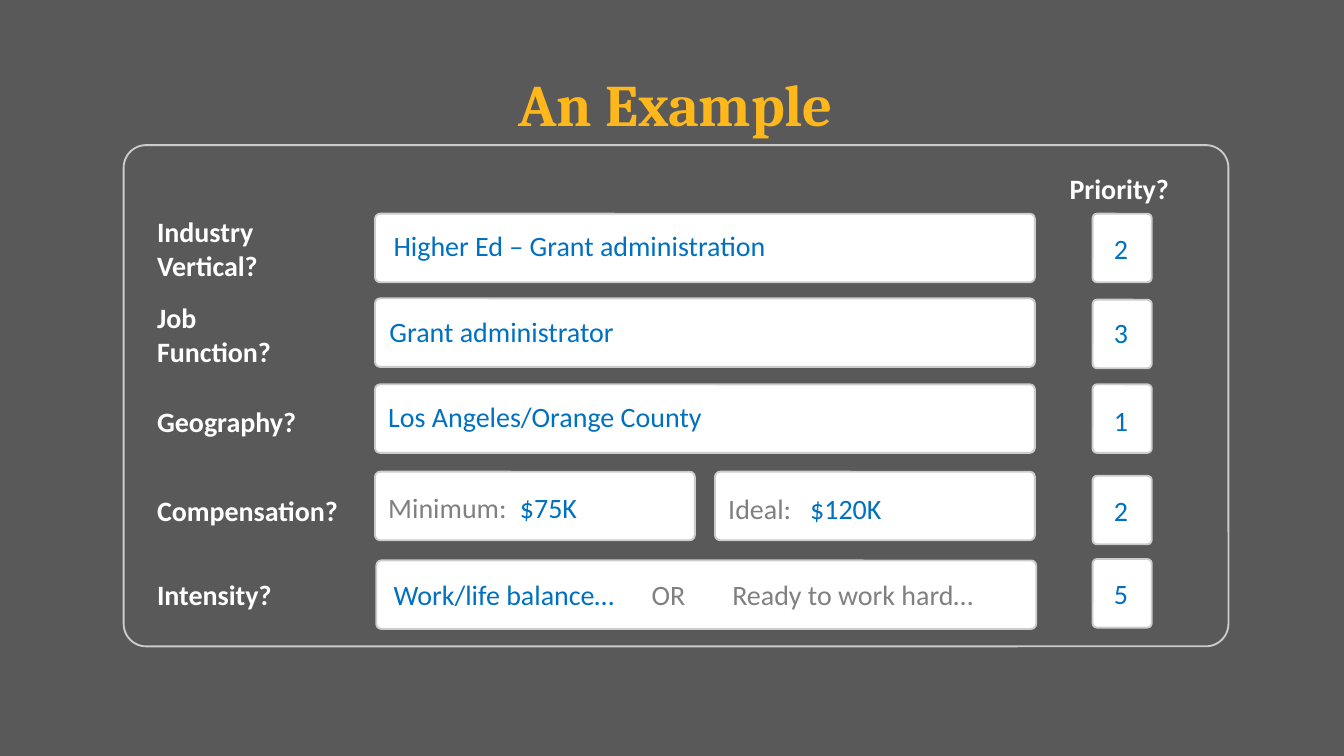
from lxml.etree import SubElement
from pptx import Presentation
from pptx.dml.color import RGBColor
from pptx.enum.shapes import MSO_SHAPE
from pptx.enum.text import MSO_ANCHOR, PP_ALIGN
from pptx.oxml.ns import qn
from pptx.util import Inches, Pt

COLORS = {
    "background": "595959",
    "title": "FFB81C",
    "border": "CCCCCC",
    "white": "FFFFFF",
    "answer": "0070C0",
    "prompt": "808080",
}

FIELD_LEFT, FIELD_WIDTH, HALF_WIDTH = 2.79, 4.91, 2.38
IDEAL_LEFT = 5.32
BOX_HEIGHT = 0.51
LABEL_LEFT, LABEL_WIDTH = 1.07, 2.38
PRIORITY_LEFT, PRIORITY_WIDTH = 8.13, 0.44
LINE_HEIGHT = 0.35

# label, label top, priority, priority box top, priority text top
ROWS = [
    ("Industry\nVertical?", 1.55, "2", 1.59, 1.67),
    ("Job\nFunction?", 2.19, "3", 2.23, 2.30),
    ("Geography?", 2.96, "1", 2.86, 2.95),
    ("Compensation?", 3.62, "2", 3.54, 3.62),
    ("Intensity?", 4.25, "5", 4.16, 4.24),
]

# left, top, width
FIELDS = [
    (FIELD_LEFT, 1.59, FIELD_WIDTH),
    (FIELD_LEFT, 2.22, FIELD_WIDTH),
    (FIELD_LEFT, 2.86, FIELD_WIDTH),
    (FIELD_LEFT, 3.51, HALF_WIDTH),
    (IDEAL_LEFT, 3.51, HALF_WIDTH),
    (2.80, 4.17, FIELD_WIDTH),
]

# left, top, width, runs of (text, color), tab position
ANSWERS = [
    (2.83, 1.65, 4.44, [("Higher Ed – Grant administration", "answer")], None),
    (2.80, 2.29, 4.44, [("Grant administrator", "answer")], None),
    (2.79, 2.92, 4.44, [("Los Angeles/Orange County", "answer")], None),
    (FIELD_LEFT, 3.60, HALF_WIDTH,
     [("Minimum:\t", "prompt"), ("$75K", "answer")], 0.98),
    (IDEAL_LEFT, 3.61, HALF_WIDTH,
     [("Ideal:\t", "prompt"), ("$120K", "answer")], 0.61),
    (2.83, 4.25, 2.92,
     [("Work/life balance…\t", "answer"), ("OR", "prompt")], 1.92),
    (5.35, 4.25, HALF_WIDTH, [("Ready to work hard…", "prompt")], None),
]


def rgb(name):
    return RGBColor.from_string(COLORS[name])


def add_box(slide, left, top, width, height, fill="white", corner=0.074):
    sp = slide.shapes.add_shape(MSO_SHAPE.ROUNDED_RECTANGLE, Inches(left),
                                Inches(top), Inches(width), Inches(height))
    sp.adjustments[0] = corner
    sp.shadow.inherit = False
    sp.fill.solid()
    sp.fill.fore_color.rgb = rgb(fill)
    sp.line.color.rgb = rgb("border")
    sp.line.width = Pt(1)


def set_tab(p, position):
    tabs = SubElement(p._p.get_or_add_pPr(), qn("a:tabLst"))
    SubElement(tabs, qn("a:tab"), pos=str(Inches(position)), algn="l")


def add_text(slide, left, top, width, lines, height=LINE_HEIGHT, size=15,
             font="Calibri", bold=False, align=PP_ALIGN.LEFT, tab=None):
    """Add a text box; each line is a list of (text, color) runs."""
    box = slide.shapes.add_textbox(Inches(left), Inches(top),
                                   Inches(width), Inches(height))
    tf = box.text_frame
    tf.word_wrap = True
    for i, runs in enumerate(lines):
        p = tf.add_paragraph() if i else tf.paragraphs[0]
        p.alignment = align
        if tab:
            set_tab(p, tab)
        for text, color in runs:
            r = p.add_run()
            r.text = text
            r.font.size = Pt(size)
            r.font.name = font
            r.font.bold = bold
            r.font.color.rgb = rgb(color)
    return box


def add_label(slide, left, top, width, text):
    lines = [[(line, "white")] for line in text.split("\n")]
    height = LINE_HEIGHT + 0.26 * (len(lines) - 1)
    add_text(slide, left, top, width, lines, height, bold=True)


def add_row(slide, label, label_top, priority, box_top, priority_top):
    add_label(slide, LABEL_LEFT, label_top, LABEL_WIDTH, label)
    add_box(slide, PRIORITY_LEFT, box_top, PRIORITY_WIDTH, BOX_HEIGHT)
    add_text(slide, PRIORITY_LEFT - 0.01, priority_top, PRIORITY_WIDTH,
             [[(priority, "answer")]], align=PP_ALIGN.CENTER)


def main():
    prs = Presentation()
    prs.slide_width = Inches(10)
    prs.slide_height = Inches(10) * 9 // 16
    slide = prs.slides.add_slide(prs.slide_layouts[6])
    slide.background.fill.solid()
    slide.background.fill.fore_color.rgb = rgb("background")

    title = add_text(slide, 0.92, 0.42, 8.22, [[("An Example", "title")]], 0.7,
                     size=31.5, font="Cambria", bold=True,
                     align=PP_ALIGN.CENTER)
    title.text_frame.vertical_anchor = MSO_ANCHOR.MIDDLE

    add_box(slide, 0.92, 1.08, 8.22, 3.73, "background", 0.045)
    for left, top, width in FIELDS:
        add_box(slide, left, top, width, BOX_HEIGHT)
    add_label(slide, 7.86, 1.23, 0.97, "Priority?")
    for row in ROWS:
        add_row(slide, *row)
    for left, top, width, runs, tab in ANSWERS:
        add_text(slide, left, top, width, [runs], tab=tab)

    prs.save("out.pptx")


if __name__ == "__main__":
    main()
